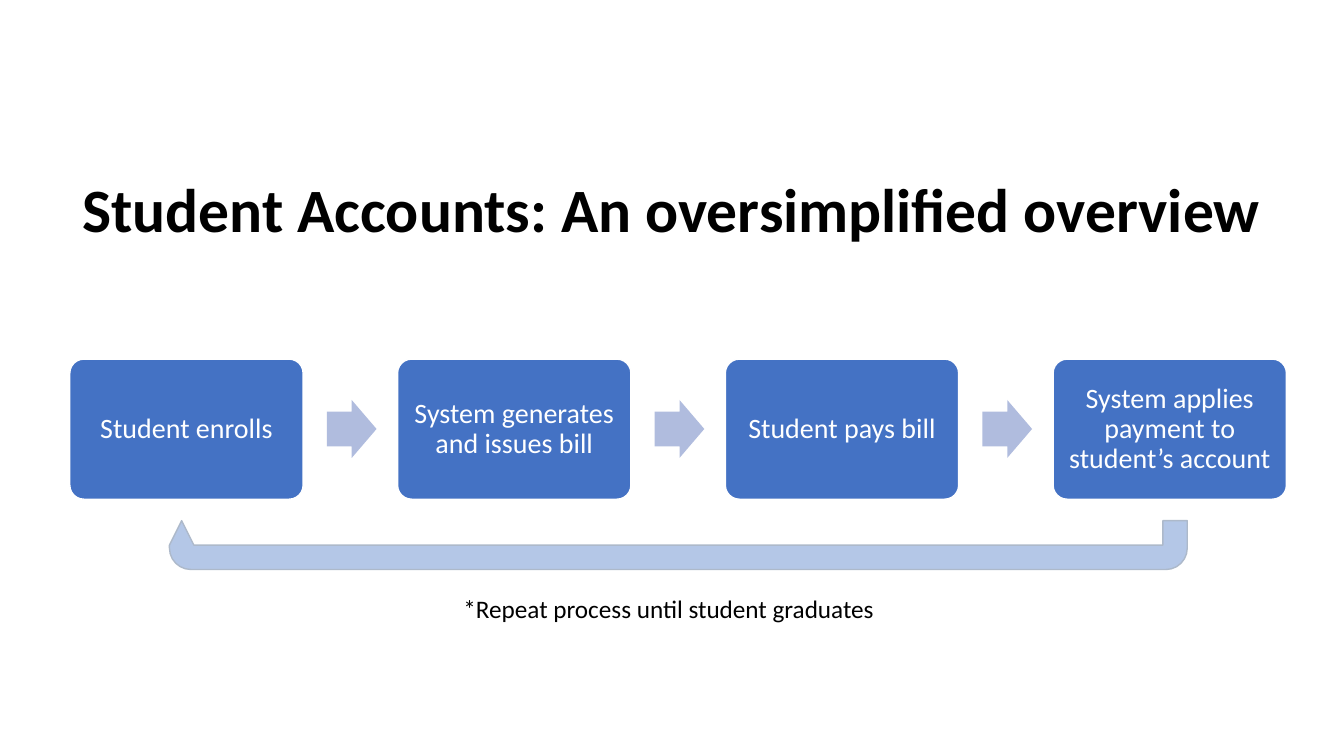
from dataclasses import dataclass

from pptx import Presentation
from pptx.dml.color import RGBColor
from pptx.enum import shapes, text
from pptx.util import Cm, Pt


@dataclass(frozen=True)
class Theme:
    font: str = "Calibri"
    ink: str = "000000"
    white: str = "FFFFFF"
    step: str = "4472C4"
    arrow: str = "B0BCDE"
    loop: str = "B4C7E7"
    loop_line: str = "ADB9CA"
    title_size: int = 44
    step_size: int = 20
    note_size: int = 18


@dataclass(frozen=True)
class Box:
    left: float
    top: float
    width: float
    height: float

    def lengths(self) -> tuple:
        return Cm(self.left), Cm(self.top), Cm(self.width), Cm(self.height)


@dataclass(frozen=True)
class Step:
    label: str
    index: int


THEME = Theme()
STEPS = [Step(label, i) for i, label in enumerate((
    "Student enrolls",
    "System generates and issues bill",
    "Student pays bill",
    "System applies payment to student’s account",
))]
STEP_LEFT, STEP_PITCH = 1.76, 8.26


def set_text(sp, content: str, size: int, color: str, bold: bool = False,
             align=text.PP_ALIGN.CENTER, spacing: float = 1.0,
             inset: tuple = (0.25, 0.13), anchor=text.MSO_ANCHOR.MIDDLE,
             fit=text.MSO_AUTO_SIZE.NONE) -> None:
    tf = sp.text_frame
    tf.word_wrap = True
    tf.auto_size = fit
    tf.vertical_anchor = anchor
    tf.margin_left = tf.margin_right = Cm(inset[0])
    tf.margin_top = tf.margin_bottom = Cm(inset[1])
    p = tf.paragraphs[0]
    p.alignment = align
    p.line_spacing = spacing
    r = p.add_run()
    r.text = content
    r.font.name = THEME.font
    r.font.size = Pt(size)
    r.font.bold = bold
    r.font.color.rgb = RGBColor.from_string(color)


def add_shape(s, kind, box: Box, fill: str, adjustments: tuple, line: str = ""):
    sp = s.shapes.add_shape(kind, *box.lengths())
    sp.shadow.inherit = False
    sp.fill.solid()
    sp.fill.fore_color.rgb = RGBColor.from_string(fill)
    if line:
        sp.line.color.rgb = RGBColor.from_string(line)
        sp.line.width = Pt(1)
    else:
        sp.line.fill.background()
    for i, value in enumerate(adjustments):
        sp.adjustments[i] = value
    return sp


def add_title(s) -> None:
    sp = s.shapes.title
    sp.left, sp.top, sp.width, sp.height = Box(0, 4.17, 33.87, 2.13).lengths()
    set_text(sp, "Student Accounts: An oversimplified overview", THEME.title_size,
             THEME.ink, bold=True, fit=text.MSO_AUTO_SIZE.SHAPE_TO_FIT_TEXT)


def add_step(s, step: Step) -> None:
    left = STEP_LEFT + step.index * STEP_PITCH
    sp = add_shape(s, shapes.MSO_SHAPE.ROUNDED_RECTANGLE, Box(left, 9.05, 5.88, 3.53),
                   THEME.step, (0.1,), THEME.white)
    set_text(sp, step.label, THEME.step_size, THEME.white, spacing=0.9, inset=(0.3, 0.3))
    if step.index < len(STEPS) - 1:
        add_shape(s, shapes.MSO_SHAPE.RIGHT_ARROW, Box(left + 6.48, 10.08, 1.25, 1.46),
                  THEME.arrow, (0.6, 0.5))


def add_loop(s) -> None:
    sp = s.shapes.add_textbox(*Box(11.43, 14.83, 11.33, 1.02).lengths())
    set_text(sp, "*Repeat process until student graduates", THEME.note_size, THEME.ink,
             align=text.PP_ALIGN.LEFT, anchor=text.MSO_ANCHOR.TOP,
             fit=text.MSO_AUTO_SIZE.SHAPE_TO_FIT_TEXT)
    sp = add_shape(s, shapes.MSO_SHAPE.U_TURN_ARROW, Box(4.27, 13.12, 25.65, 1.23),
                   THEME.loop, (0.5, 0.25, 0.5, 0.438, 0.75), THEME.loop_line)
    sp.rotation = 180


def main() -> None:
    prs = Presentation()
    prs.slide_width, prs.slide_height = Cm(33.87), Cm(19.05)
    s = prs.slides.add_slide(prs.slide_layouts.get_by_name("Title Only"))
    add_title(s)
    for step in STEPS:
        add_step(s, step)
    add_loop(s)
    prs.save("out.pptx")


if __name__ == "__main__":
    main()
